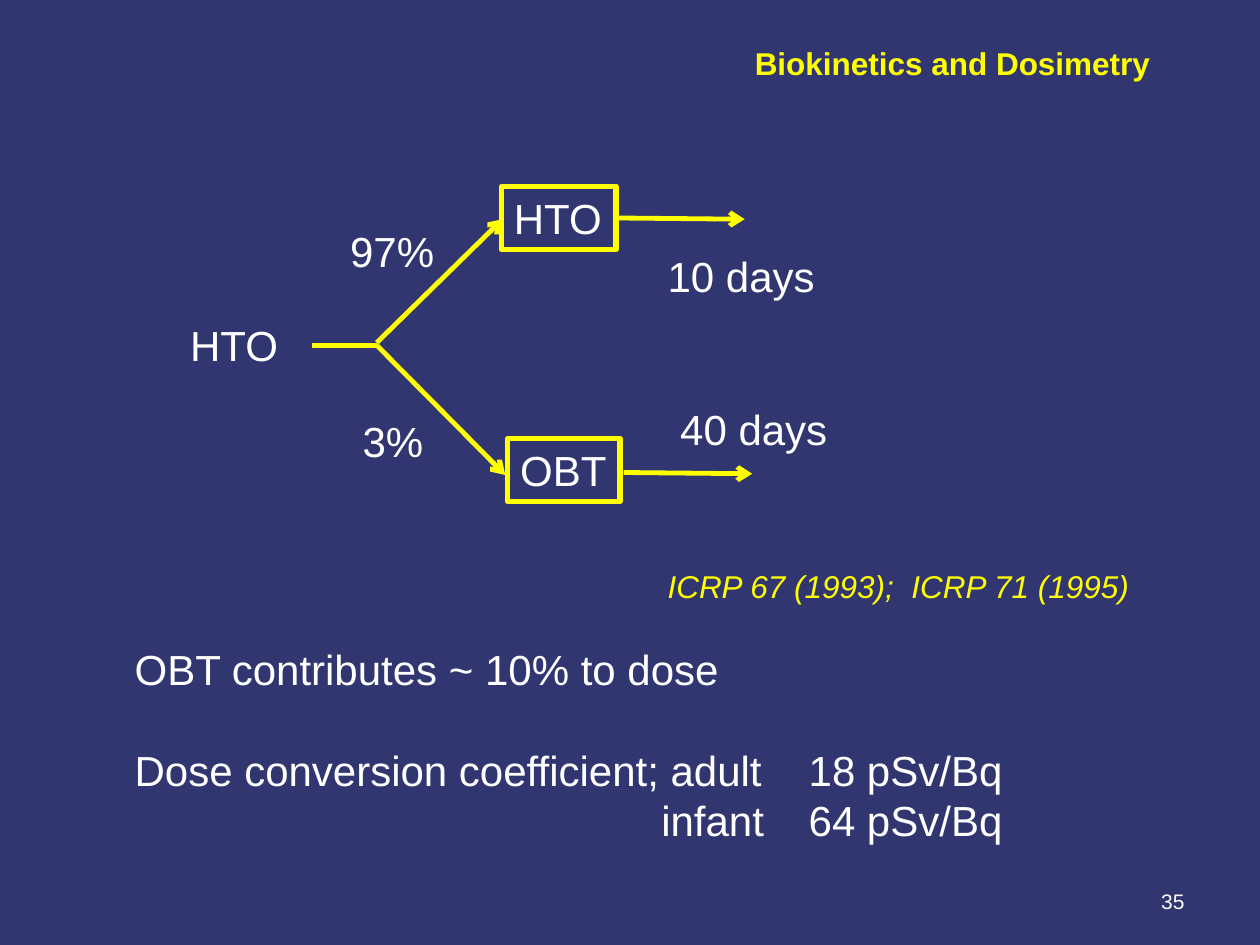
from lxml import etree
from pptx import Presentation
from pptx.dml.color import RGBColor
from pptx.enum.shapes import MSO_CONNECTOR, MSO_SHAPE
from pptx.enum.text import MSO_ANCHOR, MSO_AUTO_SIZE, PP_ALIGN
from pptx.oxml.ns import qn
from pptx.util import Inches, Pt

STRAIGHT = MSO_CONNECTOR.STRAIGHT
RECTANGLE = MSO_SHAPE.RECTANGLE
TOP, MIDDLE = MSO_ANCHOR.TOP, MSO_ANCHOR.MIDDLE
NO_FIT = MSO_AUTO_SIZE.NONE
LEFT, RIGHT = PP_ALIGN.LEFT, PP_ALIGN.RIGHT
TITLE_ONLY = 5
COLORS = {"background": "313671", "text": "FFFFFF", "accent": "FFFF00"}


def color(name):
    return RGBColor.from_string(COLORS[name])


def write(box, text, size=24, ink="text", bold=False, italic=False,
          align=LEFT, anchor=TOP, wrap=False, tabs=()):
    frame = box.text_frame
    frame.auto_size = NO_FIT
    frame.word_wrap = wrap
    frame.vertical_anchor = anchor
    for index, line in enumerate(text.split("\n")):
        para = frame.add_paragraph() if index else frame.paragraphs[0]
        para.alignment = align
        if tabs:
            stops = etree.SubElement(para._p.get_or_add_pPr(), qn("a:tabLst"))
            for stop in tabs:
                etree.SubElement(stops, qn("a:tab"), pos=str(Inches(stop)), algn="l")
        span = para.add_run()
        span.text = line
        span.font.name = "Arial"
        span.font.size = Pt(size)
        span.font.bold = bold
        span.font.italic = italic
        span.font.color.rgb = color(ink)


class SlideBuilder:
    def __init__(self, deck):
        self.page = deck.slides.add_slide(deck.slide_layouts[TITLE_ONLY])
        fill = self.page.background.fill
        fill.solid()
        fill.fore_color.rgb = color("background")

    def title(self, text, left, top, width, height):
        box = self.page.shapes.title
        box.left, box.top = Inches(left), Inches(top)
        box.width, box.height = Inches(width), Inches(height)
        write(box, text, size=18, ink="accent", bold=True, align=RIGHT, wrap=True)

    def label(self, text, left, top, width, height=0.5, **style):
        box = self.page.shapes.add_textbox(
            Inches(left), Inches(top), Inches(width), Inches(height))
        write(box, text, **style)

    def compartment(self, text, left, top, width, height=0.5):
        box = self.page.shapes.add_shape(
            RECTANGLE, Inches(left), Inches(top), Inches(width), Inches(height))
        box.shadow.inherit = False
        box.fill.background()
        box.line.color.rgb = color("accent")
        box.line.width = Pt(3)
        write(box, text)

    def flow(self, start, end, arrow=True):
        line = self.page.shapes.add_connector(
            STRAIGHT, *(Inches(value) for value in (*start, *end)))
        line.line.color.rgb = color("accent")
        line.line.width = Pt(2.75)
        if arrow:
            etree.SubElement(line.line._get_or_add_ln(), qn("a:tailEnd"), type="arrow")
        etree.SubElement(line._element.spPr, qn("a:effectLst"))


def main():
    deck = Presentation()
    deck.slide_width, deck.slide_height = Inches(10), Inches(7.5)
    slide = SlideBuilder(deck)

    slide.title("Biokinetics and Dosimetry", 0.58, 0.3, 8.65, 0.4)

    slide.compartment("HTO", 3.98, 1.48, 0.91)
    slide.compartment("OBT", 4.03, 3.48, 0.89)

    slide.flow((2.48, 2.74), (2.99, 2.74), arrow=False)
    for start, end in (
        ((2.99, 2.74), (4.01, 3.77)),
        ((2.99, 2.72), (3.99, 1.74)),
        ((4.89, 1.73), (5.91, 1.74)),
        ((4.95, 3.75), (5.97, 3.76)),
    ):
        slide.flow(start, end)

    for text, left, top, width in (
        ("HTO", 1.41, 2.49, 0.91),
        ("97%", 2.68, 1.74, 0.88),
        ("3%", 2.78, 3.25, 0.69),
        ("10 days", 5.2, 1.94, 1.38),
        ("40 days", 5.3, 3.15, 1.38),
        ("OBT contributes ~ 10% to dose", 0.97, 5.06, 4.88),
    ):
        slide.label(text, left, top, width)

    slide.label("ICRP 67 (1993);  ICRP 71 (1995)", 5.2, 4.45, 3.9, 0.4,
                size=18, ink="accent", italic=True)
    slide.label("Dose conversion coefficient; adult\t18 pSv/Bq\n\tinfant\t64 pSv/Bq",
                0.97, 5.86, 7.27, 0.91, tabs=(4.18, 5.35))
    slide.label("35", 7.17, 6.95, 2.33, 0.4,
                size=12, align=RIGHT, anchor=MIDDLE, wrap=True)

    deck.save("out.pptx")


if __name__ == "__main__":
    main()
